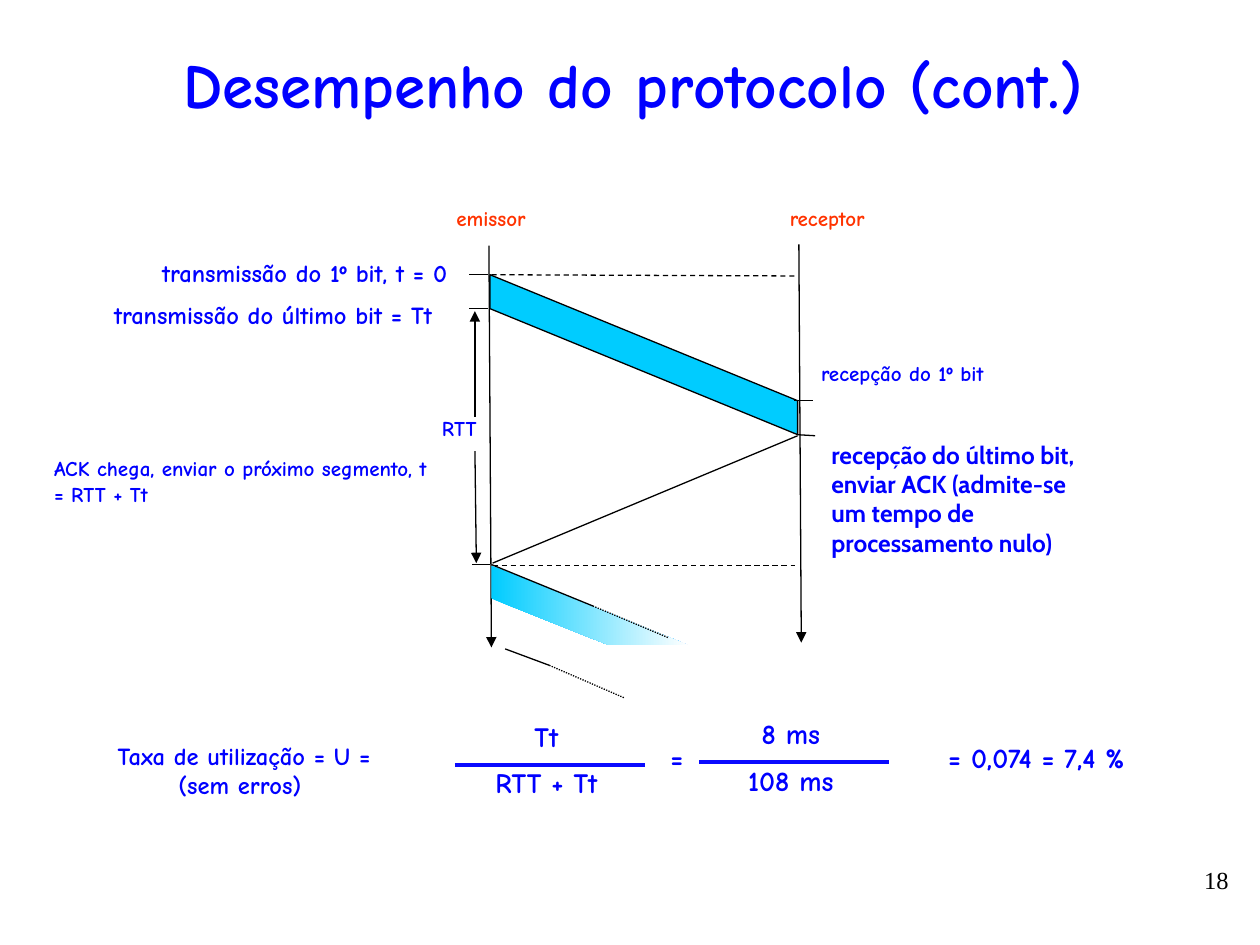
from lxml.etree import SubElement
from pptx import Presentation
from pptx.dml.color import RGBColor
from pptx.enum.dml import MSO_LINE
from pptx.enum.shapes import MSO_CONNECTOR, MSO_SHAPE
from pptx.enum.text import MSO_ANCHOR, PP_ALIGN
from pptx.oxml.ns import qn
from pptx.util import Pt

THEME = {
    "blue": RGBColor(0, 0, 255),
    "bar": RGBColor(10, 10, 255),
    "red": RGBColor(255, 51, 0),
    "cyan": RGBColor(0, 204, 255),
    "white": RGBColor(255, 255, 255),
    "black": RGBColor(0, 0, 0),
    "comic": "Comic Neue",
    "cabin": "Cabin",
    "serif": "Times New Roman",
    "title": 36,
    "formula": 16,
    "body": 14,
    "small": 12,
}
LEFT, CENTER, RIGHT = PP_ALIGN.LEFT, PP_ALIGN.CENTER, PP_ALIGN.RIGHT

presentation = Presentation()
presentation.slide_width, presentation.slide_height = Pt(720), Pt(540)
slide = presentation.slides.add_slide(presentation.slide_layouts[6])
shapes = slide.shapes


def draw_line(start, end, dash=None, arrow=False, color="black", width=0.75):
    line = shapes.add_connector(MSO_CONNECTOR.STRAIGHT, *map(Pt, start + end))
    line.line.color.rgb = THEME[color]
    for name, value in {"width": Pt(width), "dash_style": dash}.items():
        setattr(line.line, name, value)
    properties = line.element.spPr
    if arrow:
        SubElement(properties.find(qn("a:ln")), qn("a:tailEnd"), type="triangle")
    SubElement(properties, qn("a:effectLst"))


def write(text, box, align, size="body", color="blue", font="comic",
          bold=True, wrap=True, backed=False, anchor=MSO_ANCHOR.TOP):
    area = tuple(map(Pt, box))
    if backed:
        label = shapes.add_shape(MSO_SHAPE.RECTANGLE, *area)
        label.shadow.inherit = False
        label.fill.solid()
        label.fill.fore_color.rgb = THEME["white"]
        label.line.fill.background()
    else:
        label = shapes.add_textbox(*area)
    frame = label.text_frame
    frame.text = text
    for name, value in {"word_wrap": wrap, "vertical_anchor": anchor}.items():
        setattr(frame, name, value)
    font_format = {"name": THEME[font], "size": Pt(THEME[size]), "bold": bold}
    for paragraph in frame.paragraphs:
        paragraph.alignment = align
        for run in paragraph.runs:
            run.font.color.rgb = THEME[color]
            for name, value in font_format.items():
                setattr(run.font, name, value)


write("Desempenho do protocolo (cont.)", (18, 18, 687.6, 59.8), CENTER, "title",
      anchor=MSO_ANCHOR.MIDDLE)

write("transmissão do 1º bit, t = 0", (14.4, 144, 248.4, 28), RIGHT, backed=True)
write("emissor", (221.8, 113.8, 85.7, 27.4), RIGHT, "small", "red", backed=True)
write("receptor", (409, 113.8, 92.2, 27.4), RIGHT, "small", "red", backed=True)

draw_line((279.4, 140.4), (280.8, 370), arrow=True)
draw_line((456.5, 139.7), (457.9, 367.2), arrow=True)
draw_line((280.8, 157), (454.3, 157.7), MSO_LINE.DASH)
draw_line((281.5, 323.3), (454.3, 323.3), MSO_LINE.DASH)
draw_line((281.5, 321.8), (455.8, 249))

segment_outlines = [
    [(280, 157), (455.8, 229), (455.8, 248.4), (280, 176.4)],
    [(280.8, 323.3), (393.1, 368.6), (347.8, 368.6), (280.8, 342)],
]
segments = []
for outline in segment_outlines:
    corners = [(Pt(x), Pt(y)) for x, y in outline]
    builder = shapes.build_freeform(*corners[0])
    builder.add_line_segments(corners[1:], close=True)
    segment = builder.convert_to_shape()
    segment.shadow.inherit = False
    segments.append(segment)
first_segment, next_segment = segments
first_segment.fill.solid()
first_segment.fill.fore_color.rgb = THEME["cyan"]
first_segment.line.color.rgb = THEME["black"]
first_segment.line.width = Pt(0.75)
next_segment.fill.gradient()
next_segment.fill.gradient_angle = 0
for stop, position, color in zip(next_segment.fill.gradient_stops, (0, 1), ("cyan", "white")):
    stop.position = position
    stop.color.rgb = THEME[color]
next_segment.line.fill.background()

for tick_right, tick_y in [(278.6, 157), (278.6, 176.4), (280, 322.6)]:
    draw_line((tick_right, tick_y), (tick_right - 10.4, tick_y))
draw_line((464.4, 229), (453.6, 229))
draw_line((455.8, 248.4), (465.8, 249))

draw_line((271.4, 257.8), (272.2, 321.8), arrow=True)
draw_line((271.4, 238.3), (271.4, 177.8), arrow=True)

for start, bend, end in [
    ((280.8, 322.6), (338.8, 346.3), (381.6, 364.3)),
    ((288.7, 370.8), (313.9, 380.2), (357, 398.9)),
]:
    draw_line(start, bend)
    draw_line(bend, end, MSO_LINE.ROUND_DOT)

write("RTT ", (216.7, 234, 67, 26.6), RIGHT, "small")
write("transmissão do último bit = Tt", (18, 167.8, 236.2, 28), RIGHT)
write("recepção do 1º bit", (462.2, 202.3, 191.5, 28), LEFT, "small")
write("recepção do último bit, enviar ACK (admite-se um tempo de processamento nulo)",
      (468, 247.7, 158.4, 79.2), LEFT, font="cabin")
write("ACK chega, enviar o próximo segmento, t = RTT + Tt",
      (23.8, 257, 235.4, 87), LEFT, "small")

write("Taxa de utilização = U =\n(sem erros) ", (41, 419.8, 197.3, 41), CENTER)
write("=", (373, 419.8, 27.4, 26.6), CENTER, "formula")
write("= 0,074 = 7,4 %", (514.8, 419.8, 154.8, 26.6), CENTER, "formula")

bar_width = 108.7
for bar_left, bar_y, terms in [
    (259.9, 437, [("Tt", 33), ("RTT + Tt", 90)]),
    (399.6, 435.6, [("8 ms", 52), ("108 ms", 72)]),
]:
    draw_line((bar_left, bar_y), (bar_left + bar_width, bar_y), color="bar", width=2.25)
    term_center = bar_left + bar_width / 2 - 2
    for (term, term_width), rise in zip(terms, (29.5, 3)):
        write(term, (term_center - term_width / 2, bar_y - rise, term_width, 26.6),
              CENTER, "formula", wrap=False)

write("18", (541.4, 491, 167.8, 37.4), RIGHT, color="black", font="serif", bold=False)

presentation.save("out.pptx")
